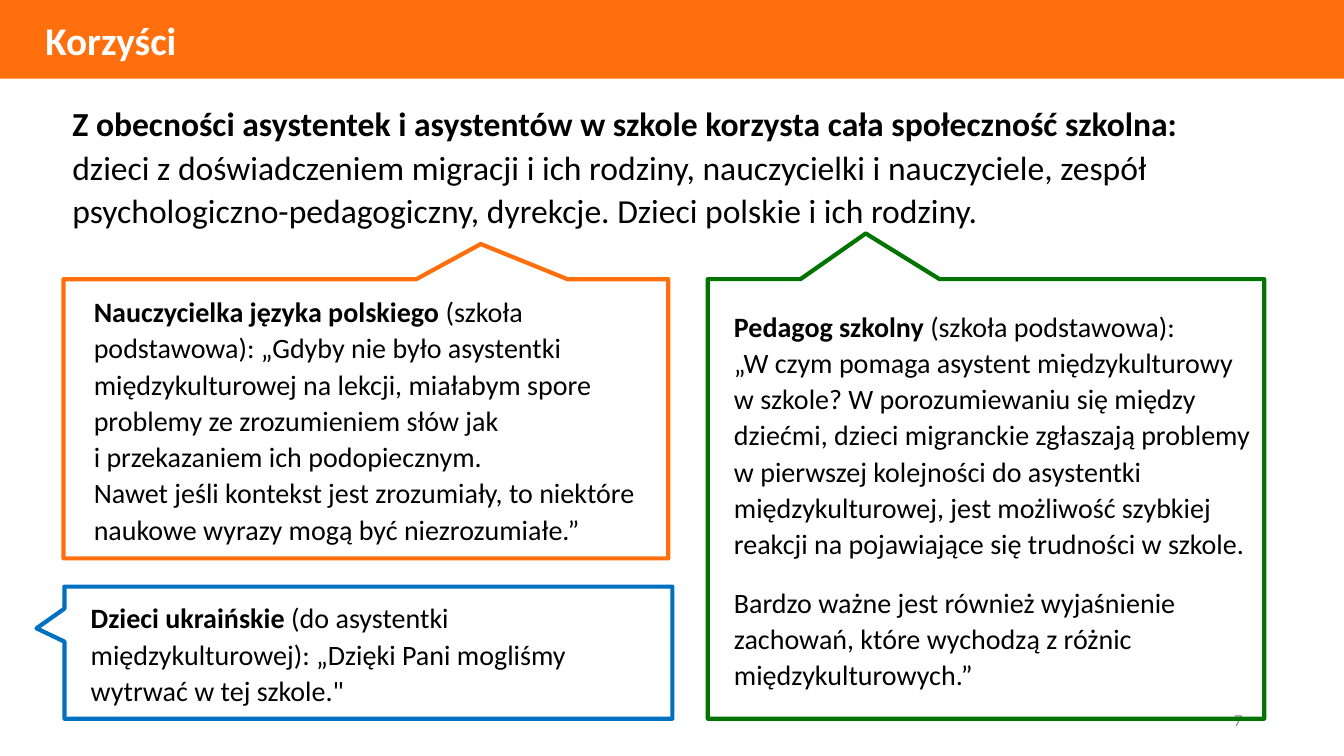
from pptx import Presentation
from pptx.dml.color import RGBColor
from pptx.enum.shapes import MSO_SHAPE as Shape
from pptx.enum.text import MSO_ANCHOR as Anchor, PP_ALIGN as Align
from pptx.util import Inches, Pt

WIDTH, HEIGHT = Inches(13.33), Inches(7.5)
COLUMN, ROW = WIDTH / 100, HEIGHT / 100
ORANGE, GREEN, BLUE = "FF6F0D", "007400", "0070C0"
BLACK, WHITE, GREY = "000000", "FFFFFF", "8C8C8C"
BOX_TOP, BOX_BOTTOM = 36.93, 95.07
BOX_HEIGHT = BOX_BOTTOM - BOX_TOP


def color(hex_value):
    """Turn a hex string into a colour."""
    return RGBColor.from_string(hex_value)


def place(column, row, columns, rows):
    """Turn grid units into slide lengths."""
    return [round(n) for n in (column * COLUMN, row * ROW, columns * COLUMN, rows * ROW)]


def set_frame(frame, anchor, left=0.1, edge=0.05):
    """Set wrapping, anchor and margins in inches."""
    frame.word_wrap = True
    frame.vertical_anchor = anchor
    frame.margin_left, frame.margin_right = Inches(left), Inches(0.1)
    frame.margin_top = frame.margin_bottom = Inches(edge)


def style(run, size, hex_value, bold=False):
    """Format one run."""
    run.font.name = "Calibri"
    run.font.size = Pt(size)
    run.font.bold = bold
    run.font.color.rgb = color(hex_value)


def write(paragraph, lead, body, size):
    """Write a bold lead followed by plain lines."""
    paragraph.alignment = Align.LEFT
    paragraph.line_spacing = 1.08
    paragraph.text = lead
    for run in paragraph.runs:
        style(run, size, BLACK, bold=True)
    for index, line in enumerate(body.split("\n")):
        if index:
            paragraph.add_line_break()
        sentence = paragraph.add_run()
        sentence.text = line
        style(sentence, size, BLACK)


def add_label(slide, area, anchor):
    """Add an empty wrapped text box and return its frame."""
    frame = slide.shapes.add_textbox(*place(*area)).text_frame
    set_frame(frame, anchor)
    return frame


def add_quote(slide, area, pointer, outline, indent, lead, *bodies):
    """Add an outlined callout with a quotation."""
    quote = slide.shapes.add_shape(Shape.RECTANGULAR_CALLOUT, *place(*area))
    quote.adjustments[0], quote.adjustments[1] = pointer
    quote.shadow.inherit = False
    quote.fill.background()
    quote.line.color.rgb = color(outline)
    quote.line.width = Pt(3)
    frame = quote.text_frame
    set_frame(frame, Anchor.MIDDLE, left=indent, edge=0.1)
    write(frame.paragraphs[0], lead, bodies[0], 20)
    for body in bodies[1:]:
        paragraph = frame.add_paragraph()
        write(paragraph, "", body, 20)
        paragraph.space_before = Pt(16)


def add_title_bar(slide, title):
    """Add the full-width title bar."""
    bar = slide.shapes.add_shape(Shape.RECTANGLE, *place(0, 0, 100, 10.4))
    bar.shadow.inherit = False
    bar.fill.solid()
    bar.fill.fore_color.rgb = color(ORANGE)
    bar.line.fill.background()
    set_frame(bar.text_frame, Anchor.MIDDLE, left=0.45)
    bar.text_frame.text = title
    heading = bar.text_frame.paragraphs[0]
    heading.alignment = Align.LEFT
    style(heading.runs[0], 28, WHITE, bold=True)


def add_page_number(slide, number):
    """Add the page number at the lower right."""
    frame = add_label(slide, (70.67, 92.53, 22.5, 5.33), Anchor.MIDDLE)
    frame.text = number
    frame.paragraphs[0].alignment = Align.RIGHT
    style(frame.paragraphs[0].runs[0], 12, GREY)


def main():
    """Build and save the slide."""
    deck = Presentation()
    deck.slide_width, deck.slide_height = WIDTH, HEIGHT
    slide = deck.slides.add_slide(deck.slide_layouts[6])

    intro = add_label(slide, (4.65, 12.53, 87.7, BOX_HEIGHT), Anchor.TOP)
    write(
        intro.paragraphs[0],
        "Z obecności asystentek i asystentów w szkole korzysta cała społeczność szkolna: ",
        "dzieci z doświadczeniem migracji i ich rodziny, nauczycielki i nauczyciele, zespół "
        "psychologiczno-pedagogiczny, dyrekcje. Dzieci polskie i ich rodziny.",
        24,
    )
    add_page_number(slide, "7")
    add_quote(
        slide, (4.73, BOX_TOP, 45, 36.93), (0.19, -0.626), ORANGE, 0.3,
        "Nauczycielka języka polskiego ",
        "(szkoła podstawowa): „Gdyby nie było asystentki międzykulturowej na lekcji, "
        "miałabym spore problemy ze zrozumieniem słów jak\n"
        "i przekazaniem ich podopiecznym.\n"
        "Nawet jeśli kontekst jest zrozumiały, to niektóre naukowe wyrazy mogą być "
        "niezrozumiałe.”",
    )
    add_quote(
        slide, (52.66, BOX_TOP, 41.4, BOX_HEIGHT), (-0.216, -0.604), GREEN, 0.26,
        "Pedagog szkolny ",
        "(szkoła podstawowa):\n"
        "„W czym pomaga asystent międzykulturowy\n"
        "w szkole? W porozumiewaniu się między dziećmi, dzieci migranckie zgłaszają "
        "problemy w pierwszej kolejności do asystentki międzykulturowej, jest możliwość "
        "szybkiej reakcji na pojawiające się trudności w szkole.",
        "Bardzo ważne jest również wyjaśnienie zachowań, które wychodzą z różnic "
        "międzykulturowych.”",
    )
    add_quote(
        slide, (4.8, 77.6, 45.23, BOX_BOTTOM - 77.6), (-0.546, -0.184), BLUE, 0.26,
        "Dzieci ukraińskie ",
        "(do asystentki międzykulturowej): „Dzięki Pani mogliśmy wytrwać w tej szkole.\"",
    )
    add_title_bar(slide, "Korzyści")
    deck.save("out.pptx")


if __name__ == "__main__":
    main()
